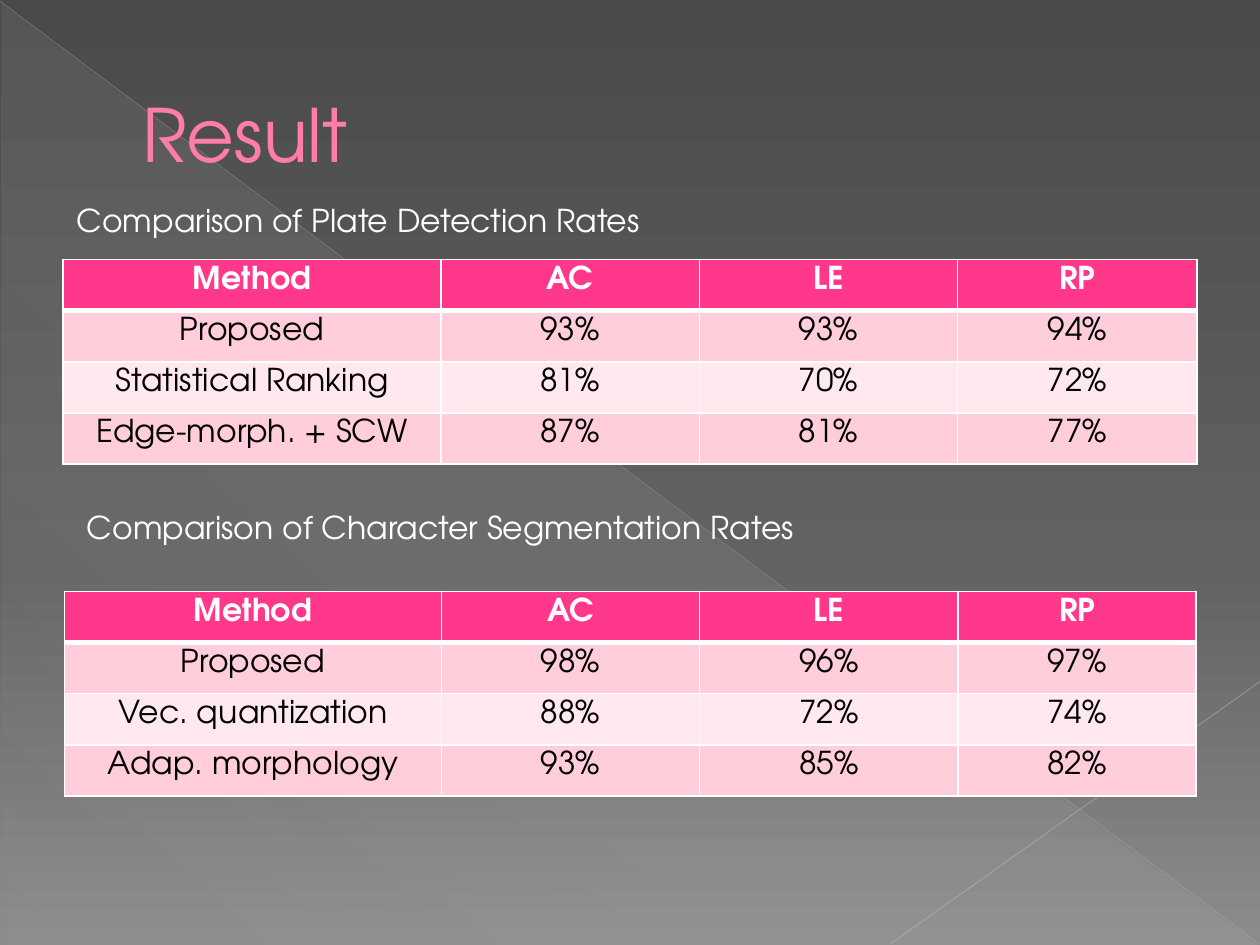
from dataclasses import dataclass

from lxml.etree import Element, SubElement
from pptx import Presentation
from pptx.dml.color import RGBColor
from pptx.enum.shapes import MSO_CONNECTOR, MSO_SHAPE
from pptx.enum.text import MSO_ANCHOR, MSO_AUTO_SIZE, PP_ALIGN
from pptx.oxml.ns import qn
from pptx.util import Pt


@dataclass(frozen=True)
class Theme:
    """Colours, type sizes and font of the slide."""
    font: str = "TeX Gyre Adventor"
    title_size: int = 42
    body_size: int = 18
    title: str = "FF7DA7"
    title_outline: str = "B12761"
    light: str = "FFFFFF"
    dark: str = "000000"
    header: str = "FF388C"
    bands: tuple = ("FFCEDA", "FFE8EE")
    backdrop: tuple = ((0, "4A4A4A", 100), (60, "626262", 100), (100, "8C8C8C", 100))
    veil: tuple = ((0, "D2D2D2", 10), (70, "D2D2D2", 8), (100, "D2D2D2", 1))
    long_line: str = "BFBFBF"
    short_line: str = "C6C6C6"


THEME = Theme()


def add_color(parent, color, opacity=100):
    """Append a colour with an opacity in percent to an XML parent."""
    element = SubElement(parent, qn("a:srgbClr"), val=color)
    if opacity < 100:
        SubElement(element, qn("a:alpha"), val=str(opacity * 1000))


def paint_gradient(fill, properties, stops, angle):
    """Give the properties element a linear gradient fill."""
    fill.solid()
    gradient = Element(qn("a:gradFill"), rotWithShape="1")
    stop_list = SubElement(gradient, qn("a:gsLst"))
    for position, color, opacity in stops:
        stop = SubElement(stop_list, qn("a:gs"), pos=str(position * 1000))
        add_color(stop, color, opacity)
    SubElement(gradient, qn("a:lin"), ang=str(angle * 60000), scaled="0")
    properties.replace(properties.find(qn("a:solidFill")), gradient)


def make_line(tag, color, width):
    """Return a solid line element for a text outline or a cell border."""
    line = Element(qn(tag), w=str(Pt(width)))
    add_color(SubElement(line, qn("a:solidFill")), color)
    return line


def add_veil(slide):
    """Add the translucent triangle over the lower left half."""
    shape = slide.shapes.add_shape(
        MSO_SHAPE.RIGHT_TRIANGLE, Pt(0.7), Pt(1.4), Pt(718.6), Pt(538.6))
    shape.shadow.inherit = False
    shape.line.fill.background()
    paint_gradient(shape.fill, shape.element.spPr, THEME.veil, 133)


def add_line(slide, start, end, color, width, opacity):
    """Add a translucent straight line between two points."""
    connector = slide.shapes.add_connector(
        MSO_CONNECTOR.STRAIGHT, *map(Pt, start + end))
    connector.line.width = Pt(width)
    connector.line.color.rgb = RGBColor.from_string(color)
    color_element = connector.line._ln.find(".//" + qn("a:srgbClr"))
    SubElement(color_element, qn("a:alpha"), val=str(opacity * 1000))
    SubElement(connector._element.spPr, qn("a:effectLst"))


def add_run(paragraph, text, size, color, bold=False):
    """Append a formatted run to a paragraph and return it."""
    run = paragraph.add_run()
    run.text = text
    run.font.name = THEME.font
    run.font.size = Pt(size)
    run.font.bold = bold
    run.font.color.rgb = RGBColor.from_string(color)
    return run


def add_title(slide, text):
    """Add the outlined slide title."""
    frame = slide.shapes.add_textbox(Pt(36), Pt(20.9), Pt(648), Pt(110.2)).text_frame
    frame.word_wrap = True
    frame.vertical_anchor = MSO_ANCHOR.MIDDLE
    paragraph = frame.paragraphs[0]
    paragraph._p.get_or_add_pPr().set("marL", str(Pt(38.2)))
    run = add_run(paragraph, text, THEME.title_size, THEME.title)
    run.font._element.insert(0, make_line("a:ln", THEME.title_outline, 0.5))


def add_caption(slide, text, left, top, width):
    """Add the caption above a table."""
    frame = slide.shapes.add_textbox(Pt(left), Pt(top), Pt(width), Pt(29)).text_frame
    frame.word_wrap = False
    frame.auto_size = MSO_AUTO_SIZE.SHAPE_TO_FIT_TEXT
    add_run(frame.paragraphs[0], text, THEME.body_size, THEME.light)


def style_cell(cell, text, row_index):
    """Fill, border and label one table cell according to its row."""
    is_header = row_index == 0
    fill_color = THEME.header if is_header else THEME.bands[(row_index - 1) % 2]
    cell.fill.solid()
    cell.fill.fore_color.rgb = RGBColor.from_string(fill_color)
    widths = {"L": 1, "R": 1, "T": 3 if row_index == 1 else 1, "B": 3 if is_header else 1}
    properties = cell._tc.get_or_add_tcPr()
    for index, (side, width) in enumerate(widths.items()):
        properties.insert(index, make_line(f"a:ln{side}", THEME.light, width))
    paragraph = cell.text_frame.paragraphs[0]
    paragraph.alignment = PP_ALIGN.CENTER
    add_run(paragraph, text, THEME.body_size,
            THEME.light if is_header else THEME.dark, is_header)


def add_rate_table(slide, left, top, widths, records):
    """Add a table of rates below a shared header row."""
    rows = [("Method", "AC", "LE", "RP"), *records]
    table = slide.shapes.add_table(
        len(rows), len(widths), Pt(left), Pt(top),
        Pt(sum(widths)), Pt(29.2 * len(rows))).table
    for column, width in zip(table.columns, widths):
        column.width = Pt(width)
    for row_index, values in enumerate(rows):
        table.rows[row_index].height = Pt(29.2)
        for column_index, value in enumerate(values):
            style_cell(table.cell(row_index, column_index), value, row_index)


def main():
    """Build the result slide and save it."""
    presentation = Presentation()
    presentation.slide_width, presentation.slide_height = Pt(720), Pt(540)
    slide = presentation.slides.add_slide(presentation.slide_layouts[6])
    background = slide.background.fill
    background.solid()
    paint_gradient(background, slide.element.find(".//" + qn("p:bgPr")), THEME.backdrop, 90)
    add_veil(slide)
    add_line(slide, (0, 0.7), (719.3, 539.3), THEME.long_line, 0.39, 35)
    add_line(slide, (720, 389.5), (509, 539.3), THEME.short_line, 0.47, 45)
    add_title(slide, "Result")
    add_rate_table(slide, 36, 148.4, (216, 147.6, 147.6, 136.8), [
        ("Proposed", "93%", "93%", "94%"),
        ("Statistical Ranking", "81%", "70%", "72%"),
        ("Edge-morph. + SCW", "87%", "81%", "77%"),
    ])
    add_caption(slide, "Comparison of Plate Detection Rates", 36.7, 111.1, 341.3)
    add_caption(slide, "Comparison of Character Segmentation Rates", 42.5, 286.8, 424.1)
    add_rate_table(slide, 36.9, 338, (215.3, 147.6, 147.6, 136.1), [
        ("Proposed", "98%", "96%", "97%"),
        ("Vec. quantization", "88%", "72%", "74%"),
        ("Adap. morphology", "93%", "85%", "82%"),
    ])
    presentation.save("out.pptx")


if __name__ == "__main__":
    main()
